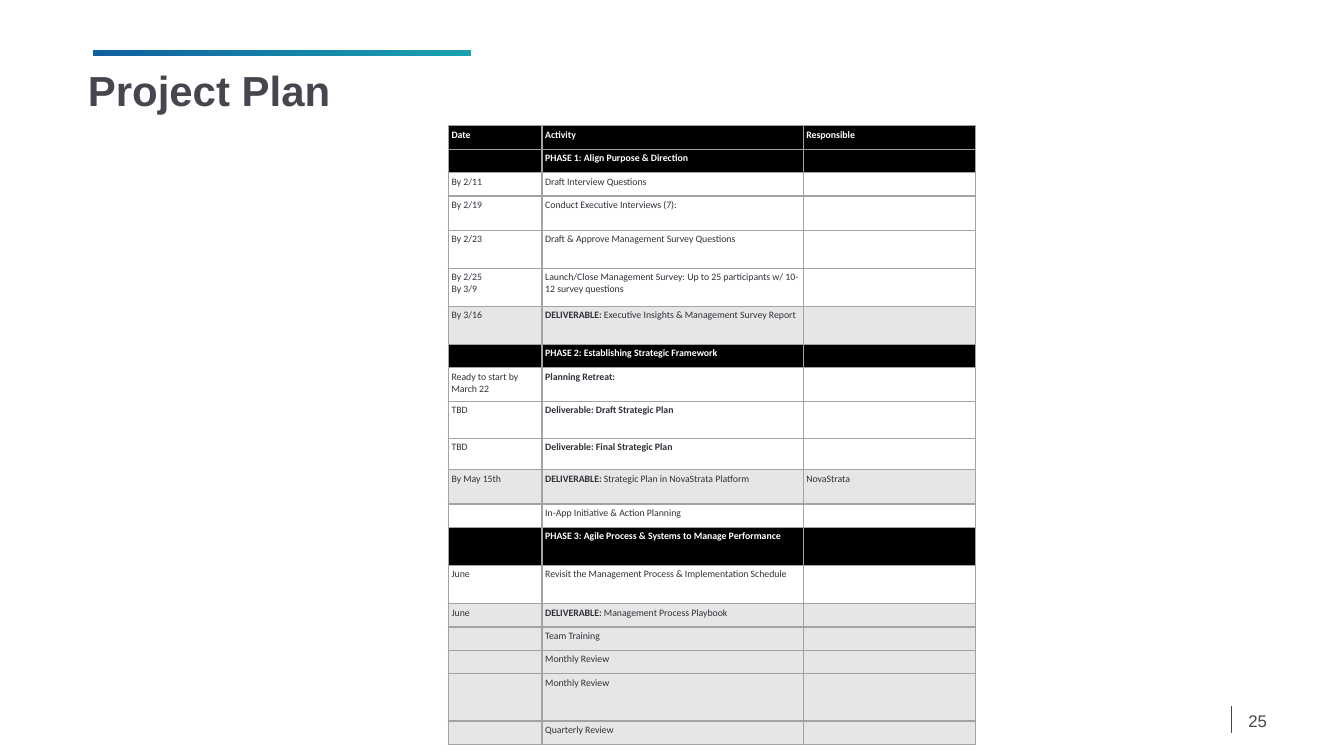
from dataclasses import dataclass

from lxml.etree import SubElement
from pptx import Presentation
from pptx.dml.color import RGBColor
from pptx.enum.shapes import MSO_CONNECTOR, MSO_SHAPE
from pptx.enum.text import MSO_ANCHOR, PP_ALIGN
from pptx.oxml.ns import qn
from pptx.util import Cm, Pt


@dataclass(frozen=True)
class Theme:
    ink: str = "47464E"
    body: str = "2F313A"
    black: str = "000000"
    white: str = "FFFFFF"
    grey: str = "E7E6E6"
    rule: str = "A3A3A3"
    blue: str = "1060A0"
    teal: str = "19A1AF"
    sans: str = "Arial"
    grid: str = "Calibri"
    title: int = 30
    number: int = 12
    small: int = 7


THEME = Theme()

# Row kind: fill, text colour, bold activity
KINDS = {
    "head": (THEME.black, THEME.white, True),
    "plain": (THEME.white, THEME.body, False),
    "bold": (THEME.white, THEME.body, True),
    "grey": (THEME.grey, THEME.body, False),
}
LEAD = "DELIVERABLE:"
WIDTHS = (2.36, 6.58, 4.34)

# Kind, height in cm, date, activity, responsible
ROWS = [
    ("head", 0.59, "Date", "Activity", "Responsible"),
    ("head", 0.59, "", "PHASE 1: Align Purpose & Direction", ""),
    ("plain", 0.59, "By 2/11", "Draft Interview Questions", ""),
    ("plain", 0.86, "By 2/19", "Conduct Executive Interviews (7):", ""),
    ("plain", 0.96, "By 2/23", "Draft & Approve Management Survey Questions", ""),
    ("plain", 0.96, "By 2/25\nBy 3/9",
     "Launch/Close Management Survey: Up to 25 participants w/ 10-12 survey questions", ""),
    ("grey", 0.96, "By 3/16", "DELIVERABLE: Executive Insights & Management Survey Report", ""),
    ("head", 0.59, "", "PHASE 2: Establishing Strategic Framework", ""),
    ("bold", 0.84, "Ready to start by March 22", "Planning Retreat:", ""),
    ("bold", 0.94, "TBD", "Deliverable: Draft Strategic Plan", ""),
    ("bold", 0.79, "TBD", "Deliverable: Final Strategic Plan", ""),
    ("grey", 0.86, "By May 15th", "DELIVERABLE: Strategic Plan in NovaStrata Platform", "NovaStrata"),
    ("plain", 0.59, "", "In-App Initiative & Action Planning", ""),
    ("head", 0.96, "", "PHASE 3: Agile Process & Systems to Manage Performance", ""),
    ("plain", 0.96, "June", "Revisit the Management Process & Implementation Schedule", ""),
    ("grey", 0.59, "June", "DELIVERABLE: Management Process Playbook", ""),
    ("grey", 0.59, "", "Team Training", ""),
    ("grey", 0.59, "", "Monthly Review", ""),
    ("grey", 1.19, "", "Monthly Review", ""),
    ("grey", 0.59, "", "Quarterly Review", ""),
]


def rgb(code):
    return RGBColor.from_string(code)


def assign(item, values):
    for name, value in values.items():
        setattr(item, name, value)


def add_run(para, text, size, color, face, bold=False):
    run = para.add_run()
    run.text = text
    assign(run.font, {"size": Pt(size), "name": face, "bold": bold})
    run.font.color.rgb = rgb(color)


def add_title(slide, text):
    title = slide.shapes.title
    assign(title, {"left": Cm(1.96), "top": Cm(1.24), "width": Cm(29.21), "height": Cm(2.21)})
    frame = title.text_frame
    frame.vertical_anchor = MSO_ANCHOR.MIDDLE
    para = frame.paragraphs[0]
    assign(para, {"alignment": PP_ALIGN.LEFT, "line_spacing": 0.9})
    add_run(para, text, THEME.title, THEME.ink, THEME.sans, True)


def add_bar(slide):
    bar = slide.shapes.add_shape(MSO_SHAPE.RECTANGLE, Cm(2.34), Cm(1.27), Cm(9.53), Cm(0.14))
    bar.shadow.inherit = False
    bar.line.fill.background()
    bar.fill.gradient()
    bar.fill.gradient_angle = 0
    for stop, code in zip(bar.fill.gradient_stops, (THEME.blue, THEME.teal)):
        stop.color.rgb = rgb(code)


def add_number(slide, text):
    line = slide.shapes.add_connector(
        MSO_CONNECTOR.STRAIGHT, Cm(31.04), Cm(17.78), Cm(31.04), Cm(18.47))
    line.line.width = Pt(0.5)
    line.line.color.rgb = rgb(THEME.ink)
    SubElement(line._element.spPr, qn("a:effectLst"))
    box = slide.shapes.add_textbox(Cm(23.93), Cm(17.65), Cm(8.25), Cm(1.02))
    assign(box.text_frame, {"word_wrap": True, "vertical_anchor": MSO_ANCHOR.MIDDLE})
    para = box.text_frame.paragraphs[0]
    para.alignment = PP_ALIGN.RIGHT
    add_run(para, text, THEME.number, THEME.ink, THEME.sans)


def add_edges(cell):
    props = cell._tc.get_or_add_tcPr()
    for place, tag in enumerate(("lnL", "lnR", "lnT", "lnB")):
        edge = SubElement(props, qn(f"a:{tag}"), w=str(Pt(1)))
        fill = SubElement(edge, qn("a:solidFill"))
        SubElement(fill, qn("a:srgbClr"), val=THEME.rule)
        props.insert(place, edge)


def fill_cell(cell, text, fill, color, bold):
    sides = ("left", "right", "top", "bottom")
    assign(cell, {f"margin_{side}": Cm(0.08) for side in sides})
    cell.fill.solid()
    cell.fill.fore_color.rgb = rgb(fill)
    add_edges(cell)
    frame = cell.text_frame
    for index, part in enumerate(text.split("\n")):
        para = frame.add_paragraph() if index else frame.paragraphs[0]
        lead = LEAD if part.startswith(LEAD) else ""
        for words, heavy in ((lead, True), (part[len(lead):], bold)):
            if words:
                add_run(para, words, THEME.small, color, THEME.grid, heavy)
        # Keeps empty cells from stretching their row
        para._p.get_or_add_endParaRPr().set("sz", str(THEME.small * 100))


def add_plan(slide):
    frame = slide.shapes.add_table(
        len(ROWS), len(WIDTHS), Cm(11.3), Cm(3.17),
        Cm(sum(WIDTHS)), Cm(sum(row[1] for row in ROWS)))
    table = frame.table
    assign(table, {"first_row": False, "horz_banding": False})
    for column, width in zip(table.columns, WIDTHS):
        column.width = Cm(width)
    for row, (kind, height, *texts) in zip(table.rows, ROWS):
        row.height = Cm(height)
        fill, color, bold = KINDS[kind]
        for index, (cell, text) in enumerate(zip(row.cells, texts)):
            heavy = bold and (kind == "head" or index == 1)
            fill_cell(cell, text, fill, color, heavy)


def main():
    deck = Presentation()
    assign(deck, {"slide_width": Cm(33.87), "slide_height": Cm(19.05)})
    slide = deck.slides.add_slide(deck.slide_layouts[5])
    add_bar(slide)
    add_plan(slide)
    add_title(slide, "Project Plan")
    add_number(slide, "25")
    deck.save("out.pptx")


if __name__ == "__main__":
    main()
